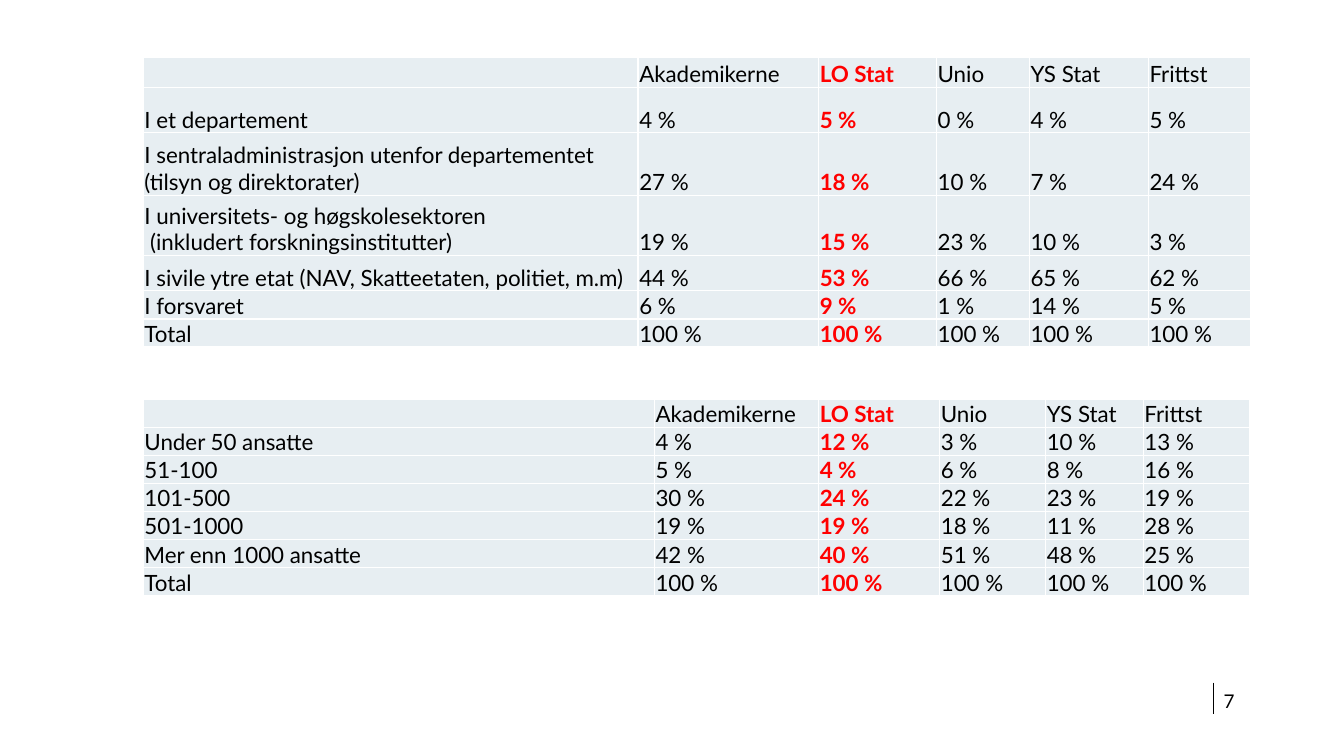
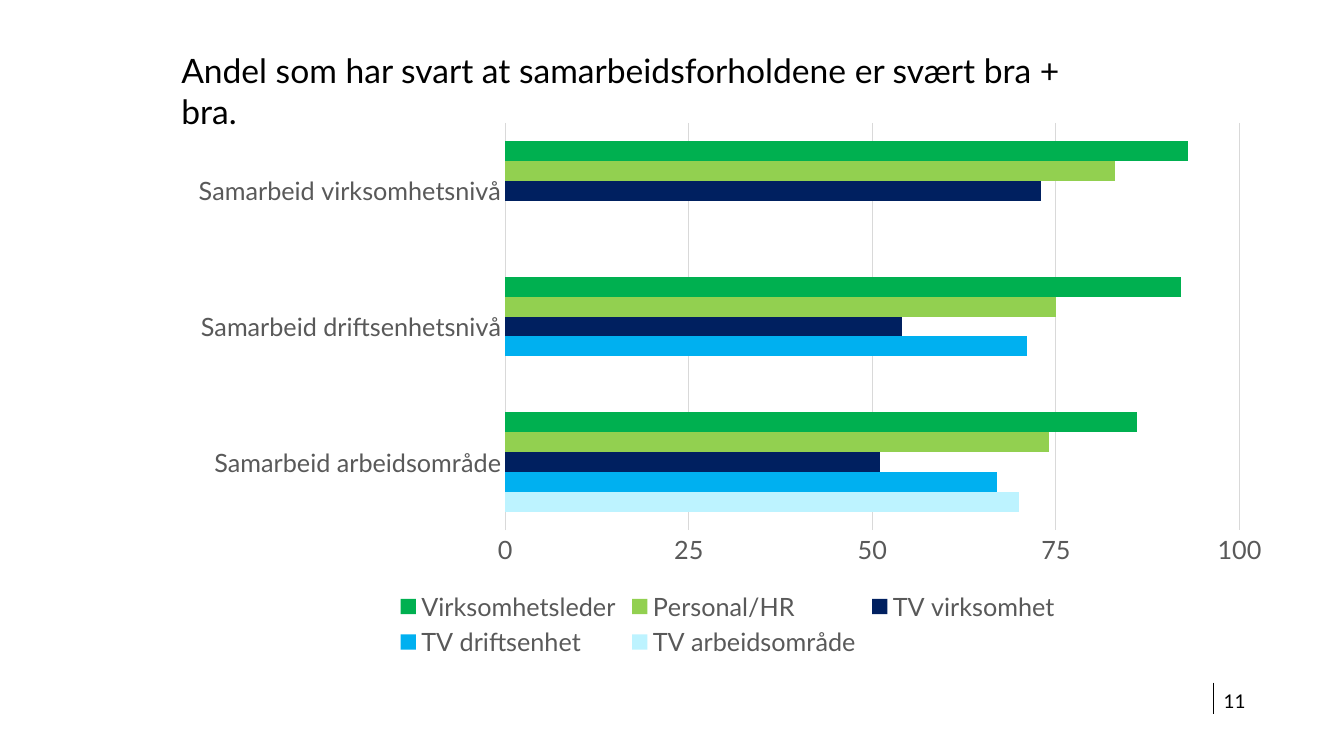
from lxml import etree
from pptx import Presentation
from pptx.chart.data import CategoryChartData
from pptx.dml.color import RGBColor
from pptx.enum.chart import XL_CHART_TYPE, XL_LEGEND_POSITION, XL_TICK_MARK
from pptx.enum.shapes import MSO_CONNECTOR
from pptx.enum.text import MSO_ANCHOR
from pptx.oxml import parse_xml
from pptx.oxml.ns import nsdecls, qn
from pptx.util import Cm, Pt

BAR_CLUSTERED = XL_CHART_TYPE.BAR_CLUSTERED
LEGEND_BOTTOM = XL_LEGEND_POSITION.BOTTOM
NO_TICK = XL_TICK_MARK.NONE
STRAIGHT = MSO_CONNECTOR.STRAIGHT
MIDDLE = MSO_ANCHOR.MIDDLE
BOTTOM = MSO_ANCHOR.BOTTOM

FONT = "Lato"
BLACK = "000000"
RED = "FF0000"
WHITE = "FFFFFF"
CELL_FILL = "E7EEF2"
CHART_TEXT = "595959"
GRID = "D9D9D9"

HEADER = ["", "Akademikerne", "LO Stat", "Unio", "YS Stat", "Frittst"]
HIGHLIGHT_COLUMN = HEADER.index("LO Stat")
TABLE_LEFT = 3.61
LINE_ROW = 0.69

TABLES = [
    {
        "top": 1.45,
        "widths": [12.47, 4.55, 2.97, 2.34, 3, 2.57],
        "heights": [0.76, 1.14, 1.57, 1.52, 0.89, LINE_ROW, LINE_ROW],
        "rows": [
            ("I et departement", [4, 5, 0, 4, 5]),
            ("I sentraladministrasjon utenfor departementet (tilsyn og direktorater)",
             [27, 18, 10, 7, 24]),
            ("I universitets- og høgskolesektoren\n (inkludert forskningsinstitutter)",
             [19, 15, 23, 10, 3]),
            ("I sivile ytre etat (NAV, Skatteetaten, politiet, m.m)", [44, 53, 66, 65, 62]),
            ("I forsvaret", [6, 9, 1, 14, 5]),
            ("Total", [100] * 5),
        ],
    },
    {
        "top": 10.06,
        "widths": [12.88, 4.14, 3.05, 2.67, 2.46, 2.69],
        "heights": [LINE_ROW] * 7,
        "rows": [
            ("Under 50 ansatte", [4, 12, 3, 10, 13]),
            ("51-100", [5, 4, 6, 8, 16]),
            ("101-500", [30, 24, 22, 23, 19]),
            ("501-1000", [19, 19, 18, 11, 28]),
            ("Mer enn 1000 ansatte", [42, 40, 51, 48, 25]),
            ("Total", [100] * 5),
        ],
    },
]

CHART_TITLE = "Andel som har svart at samarbeidsforholdene er svært bra + bra."
CATEGORIES = ["Samarbeid arbeidsområde", "Samarbeid driftsenhetsnivå", "Samarbeid virksomhetsnivå"]
SERIES = [
    ("TV arbeidsområde", [70, None, None], "BDF3FF"),
    ("TV driftsenhet", [67, 71, None], "00B0F0"),
    ("TV virksomhet", [51, 54, 73], "002060"),
    ("Personal/HR", [74, 75, 83], "92D050"),
    ("Virksomhetsleder", [86, 92, 93], "00B050"),
]
PLOT_AREA = {"x": 0.3, "y": 0.02, "w": 0.66, "h": 0.74}


def color(value):
    return RGBColor.from_string(value)


def style_font(font, size, value, bold=False):
    font.name = FONT
    font.size = Pt(size)
    font.bold = bold
    font.color.rgb = color(value)


def add_span(para, text, size, value=BLACK, bold=False):
    span = para.add_run()
    span.text = text
    style_font(span.font, size, value, bold)


def add_text(page, place, text, size):
    box = page.shapes.add_textbox(*map(Cm, place))
    box.text_frame.word_wrap = True
    add_span(box.text_frame.paragraphs[0], text, size)
    return box.text_frame


def add_page(deck, number):
    page = deck.slides.add_slide(deck.slide_layouts[6])
    rule = page.shapes.add_connector(STRAIGHT, Cm(30.58), Cm(17.2), Cm(30.58), Cm(17.98))
    rule.line.color.rgb = color(BLACK)
    rule.line.width = Pt(0.75)
    etree.SubElement(rule.element.spPr, qn("a:effectLst"))
    frame = add_text(page, (30.84, 17.42, 3, 0.48), str(number), 13.5)
    frame.margin_left = frame.margin_right = frame.margin_top = frame.margin_bottom = 0
    frame.vertical_anchor = MIDDLE
    return page


def style_cell(cell):
    cell.margin_left = cell.margin_right = cell.margin_top = Cm(0.03)
    cell.margin_bottom = 0
    cell.vertical_anchor = BOTTOM
    properties = cell._tc.get_or_add_tcPr()
    for side in ("lnL", "lnR", "lnT", "lnB"):
        properties.append(parse_xml(
            f'<a:{side} {nsdecls("a")} w="12700"><a:solidFill>'
            f'<a:srgbClr val="{WHITE}"/></a:solidFill></a:{side}>'))
    cell.fill.solid()
    cell.fill.fore_color.rgb = color(CELL_FILL)


def fill_cell(cell, text, highlighted):
    style_cell(cell)
    frame = cell.text_frame
    for index, line in enumerate(text.split("\n")):
        para = frame.add_paragraph() if index else frame.paragraphs[0]
        if line:
            add_span(para, line, 16, RED if highlighted else BLACK, highlighted)
        else:
            etree.SubElement(para._p, qn("a:endParaRPr"), sz="1600")


def add_data_table(page, data):
    widths, heights = data["widths"], data["heights"]
    frame = page.shapes.add_table(
        len(heights), len(widths), Cm(TABLE_LEFT), Cm(data["top"]),
        Cm(sum(widths)), Cm(sum(heights)))
    table = frame.table
    table.first_row = table.horz_banding = False
    for column, width in zip(table.columns, widths):
        column.width = Cm(width)
    for row, height in zip(table.rows, heights):
        row.height = Cm(height)
    lines = [HEADER] + [[label] + [f"{value} %" for value in values]
                        for label, values in data["rows"]]
    for row, texts in zip(table.rows, lines):
        for index, (cell, text) in enumerate(zip(row.cells, texts)):
            fill_cell(cell, text, index == HIGHLIGHT_COLUMN)


def style_line(line, value):
    line.color.rgb = color(value)
    line.width = Pt(0.75)


def place_plot(chart):
    area = chart._chartSpace.chart.plotArea
    for old in area.findall(qn("c:layout")):
        area.remove(old)
    layout = etree.Element(qn("c:layout"))
    manual = etree.SubElement(layout, qn("c:manualLayout"))
    etree.SubElement(manual, qn("c:layoutTarget"), val="inner")
    for side in "xy":
        etree.SubElement(manual, qn(f"c:{side}Mode"), val="edge")
    for name, share in PLOT_AREA.items():
        etree.SubElement(manual, qn(f"c:{name}"), val=str(share))
    area.insert(0, layout)


def add_cooperation_chart(page):
    data = CategoryChartData()
    data.categories = CATEGORIES
    for name, values, _ in SERIES:
        data.add_series(name, values)
    chart = page.shapes.add_chart(
        BAR_CLUSTERED, Cm(4.32), Cm(2.82), Cm(28.04), Cm(13.87), data).chart
    chart.has_title = False
    style_font(chart.font, 18, CHART_TEXT)
    chart.has_legend = True
    chart.legend.position = LEGEND_BOTTOM
    chart.legend.include_in_layout = False
    style_font(chart.legend.font, 18, CHART_TEXT)

    plot = chart.plots[0]
    plot.gap_width = 182
    plot.overlap = 0
    plot.vary_by_categories = False
    for series, (_, _, value) in zip(plot.series, SERIES):
        series.format.fill.solid()
        series.format.fill.fore_color.rgb = color(value)

    for axis in (chart.category_axis, chart.value_axis):
        axis.major_tick_mark = axis.minor_tick_mark = NO_TICK
        style_font(axis.tick_labels.font, 18, CHART_TEXT)
    style_line(chart.category_axis.format.line, GRID)
    scale = chart.value_axis
    scale.minimum_scale, scale.maximum_scale, scale.major_unit = 0, 100, 25
    scale.format.line.fill.background()
    scale.has_major_gridlines = True
    style_line(scale.major_gridlines.format.line, GRID)
    place_plot(chart)


def main():
    deck = Presentation()
    deck.slide_width, deck.slide_height = Cm(33.87), Cm(19.05)

    tables_page = add_page(deck, 7)
    for data in TABLES:
        add_data_table(tables_page, data)

    chart_page = add_page(deck, 11)
    add_text(chart_page, (4.32, 1.14, 23.24, 1.27), CHART_TITLE, 24)
    add_cooperation_chart(chart_page)

    deck.save("out.pptx")


if __name__ == "__main__":
    main()
